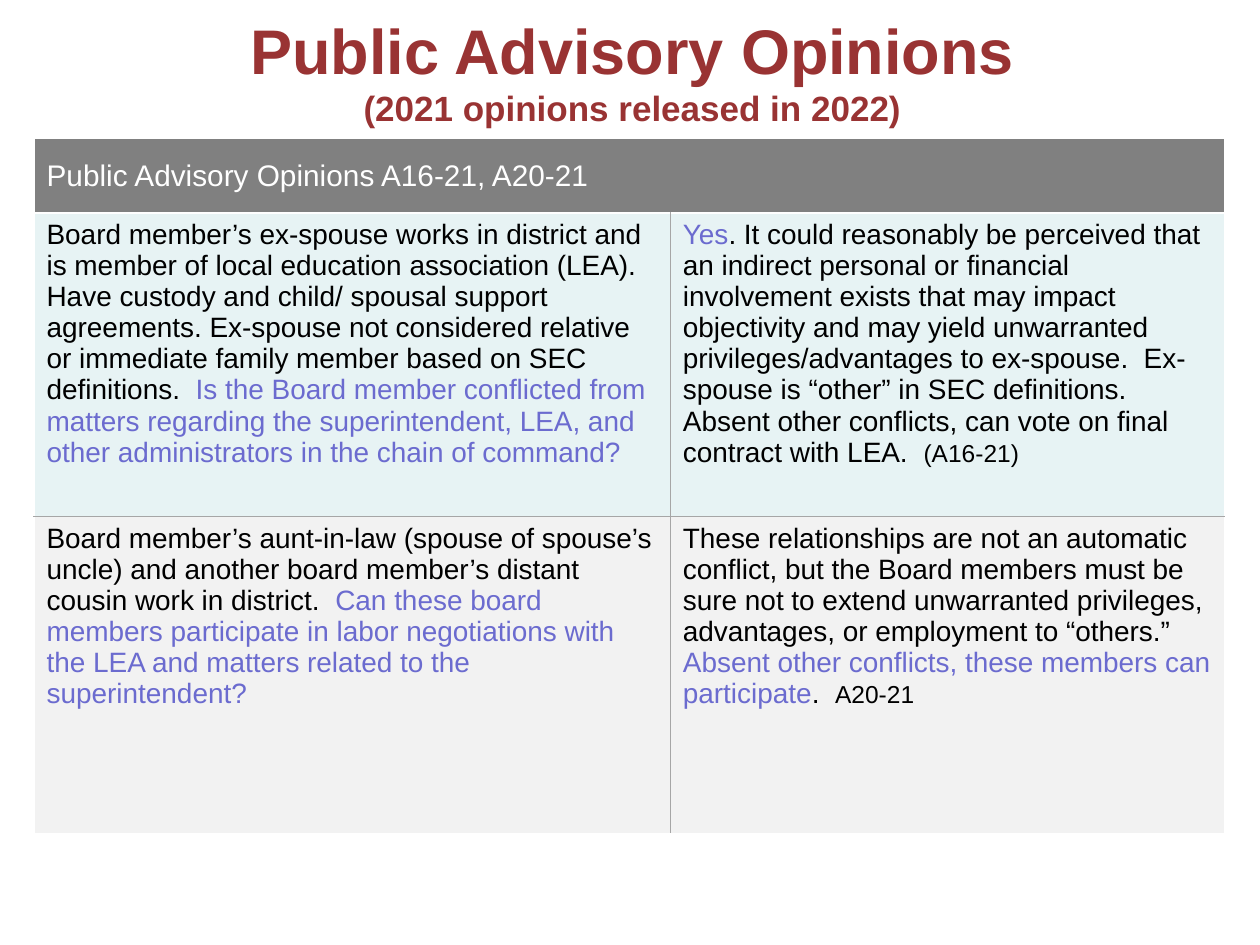
from lxml import etree
from pptx import Presentation
from pptx.dml.color import RGBColor
from pptx.enum import text as t
from pptx.oxml import ns
from pptx.util import Inches, Pt

# Content: each cell is a list of (text, format) runs
FONT = "Arial"
RED, WHITE, BLACK, VIOLET = "993333", "FFFFFF", "000000", "6B6BCF"
HEADER_FILL, GRID = "808080", "A6A6A6"
ASK, CITE = {"color": VIOLET}, {"size": 14}

TITLE = "Public Advisory Opinions"
SUBTITLE = "(2021 opinions released in 2022)"
HEADER = "Public Advisory Opinions A16-21, A20-21"
OPINIONS = [
    ("E7F3F4", [
        [("Board member’s ex-spouse works in district and is member of local "
          "education association (LEA). Have custody and child/ spousal support "
          "agreements. Ex-spouse not considered relative or immediate family "
          "member based on SEC definitions.  ", {}),
         ("Is the Board member conflicted from matters regarding the "
          "superintendent, LEA, and other administrators in the chain of "
          "command?", ASK)],
        [("Yes", ASK),
         (". It could reasonably be perceived that an indirect personal or "
          "financial involvement exists that may impact objectivity and may "
          "yield unwarranted privileges/advantages to ex-spouse.  Ex-spouse is "
          "“other” in SEC definitions.  Absent other conflicts, can vote on "
          "final contract with LEA.  ", {}),
         ("(A16-21)", CITE)],
    ]),
    ("F2F2F2", [
        [("Board member’s aunt-in-law (spouse of spouse’s uncle) and another "
          "board member’s distant cousin work in district.  ", {}),
         ("Can these board members participate in labor negotiations with the "
          "LEA and matters related to the superintendent?", ASK)],
        [("These relationships are not an automatic conflict, but the Board "
          "members must be sure not to extend unwarranted privileges, "
          "advantages, or employment to “others.”  ", {}),
         ("Absent other conflicts, these members can participate", ASK),
         (".  ", {}),
         ("A20-21", CITE)],
    ]),
]
COLUMN_WIDTHS = [5.05, 4.4]
ROW_HEIGHTS = [0.59, 2.41, 2.52]


def rgb(color):
    return RGBColor.from_string(color)


def add_text(paragraph, words, size=16, color=BLACK, bold=False):
    run = paragraph.add_run()
    run.text = words
    run.font.name, run.font.size, run.font.bold = FONT, Pt(size), bold
    run.font.color.rgb = rgb(color)


def style_cell(cell, fill, left=WHITE, right=WHITE, top=WHITE, bottom=WHITE):
    cell.fill.solid()
    cell.fill.fore_color.rgb = rgb(fill)
    properties = cell._tc.get_or_add_tcPr()
    edges = [("L", left), ("R", right), ("T", top), ("B", bottom)]
    for position, (side, color) in enumerate(edges):
        line = etree.Element(ns.qn(f"a:ln{side}"), w=str(Pt(1)))
        solid = etree.SubElement(line, ns.qn("a:solidFill"))
        etree.SubElement(solid, ns.qn("a:srgbClr"), val=color)
        properties.insert(position, line)


deck = Presentation()
deck.slide_width, deck.slide_height = Inches(10), Inches(7.5)
slide = deck.slides.add_slide(deck.slide_layouts[5])

# Title
heading = slide.shapes.title
heading.left, heading.top = Inches(0.79), Inches(0.2)
heading.width, heading.height = Inches(8.46), Inches(0.71)
frame = heading.text_frame
frame.auto_size = t.MSO_AUTO_SIZE.NONE
frame.vertical_anchor = t.MSO_ANCHOR.MIDDLE
heading_line = frame.paragraphs[0]
heading_line.alignment = t.PP_ALIGN.CENTER
add_text(heading_line, TITLE, size=36, color=RED, bold=True)
heading_line.add_line_break()
add_text(heading_line, SUBTITLE, size=20, color=RED, bold=True)

# Opinions table
table = slide.shapes.add_table(
    len(ROW_HEIGHTS), len(COLUMN_WIDTHS), Inches(0.27), Inches(1.1),
    Inches(sum(COLUMN_WIDTHS)), Inches(sum(ROW_HEIGHTS))).table
for column, width in zip(table.columns, COLUMN_WIDTHS):
    column.width = Inches(width)
for row, height in zip(table.rows, ROW_HEIGHTS):
    row.height = Inches(height)

# Header row across both columns
header = table.cell(0, 0)
header.merge(table.cell(0, 1))
header.vertical_anchor = t.MSO_ANCHOR.MIDDLE
add_text(header.text_frame.paragraphs[0], HEADER, size=17, color=WHITE)
for column in range(len(COLUMN_WIDTHS)):
    style_cell(table.cell(0, column), HEADER_FILL)

# Question and answer rows: grey lines inside, white lines outside
last_row, last_column = len(OPINIONS), len(COLUMN_WIDTHS) - 1
for row, (fill, cells) in enumerate(OPINIONS, start=1):
    for column, runs in enumerate(cells):
        cell = table.cell(row, column)
        for words, look in runs:
            add_text(cell.text_frame.paragraphs[0], words, **look)
        style_cell(cell, fill,
                   left=GRID if column > 0 else WHITE,
                   right=GRID if column < last_column else WHITE,
                   top=GRID if row > 1 else WHITE,
                   bottom=GRID if row < last_row else WHITE)

deck.save("out.pptx")
